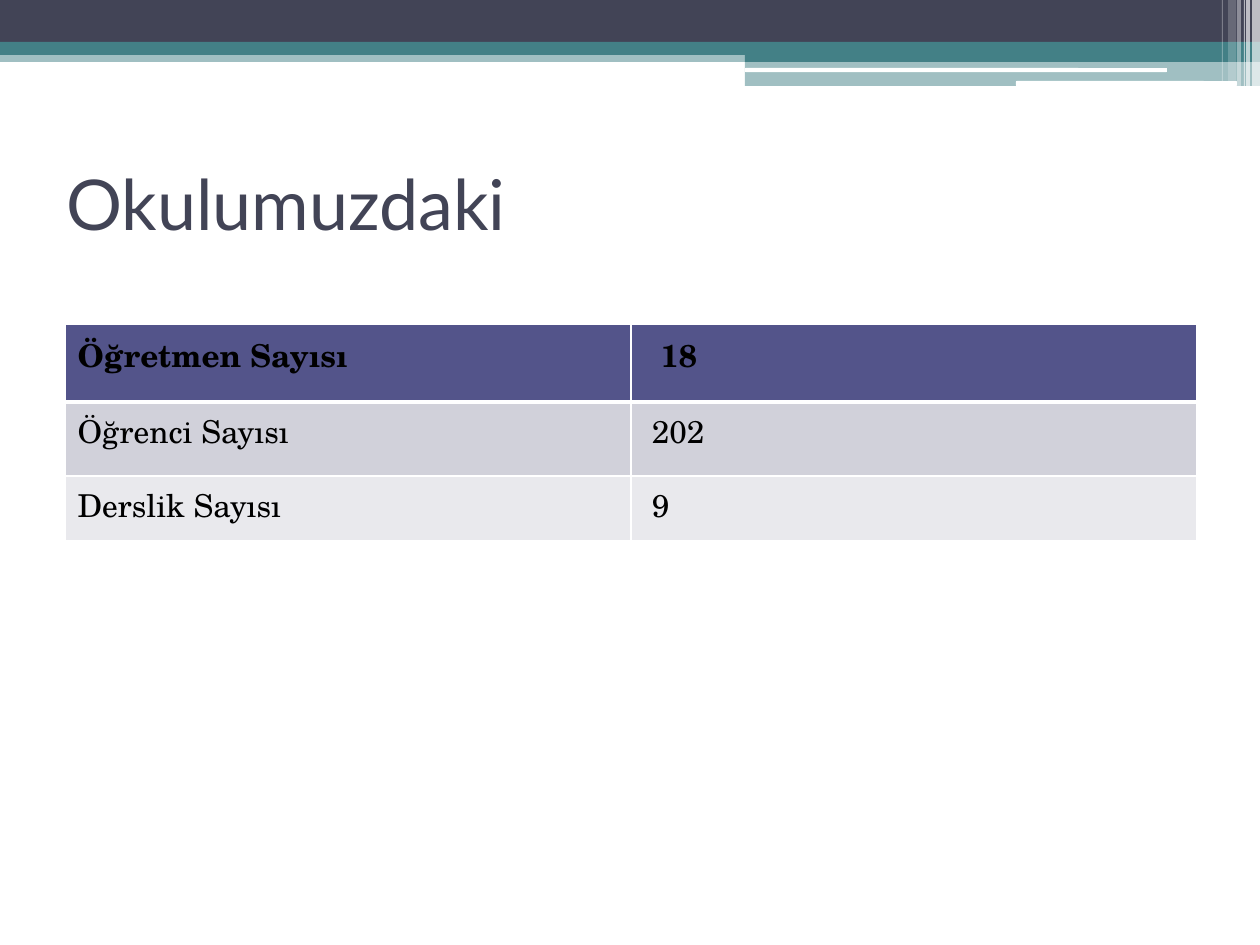
import pptx
import pptx.util
import pptx.dml.color
import pptx.enum.shapes
import pptx.enum.text
import pptx.oxml
import pptx.oxml.ns
import lxml.etree

DARK, TEAL, WHITE, BLACK = "424456", "438086", "FFFFFF", "000000"
SHAPES = pptx.enum.shapes.MSO_SHAPE


def px(count):
    return pptx.util.Inches(count / 126)


def tint(code):
    return pptx.dml.color.RGBColor.from_string(code)


class Deck:
    """Hold the style and the current slide, and draw each kind of element."""

    head_font, body_font = "Lato", "TeX Gyre Schola"
    head_size, body_size = 40, 18

    def __init__(self):
        self.show = pptx.Presentation()
        self.show.slide_width, self.show.slide_height = px(1260), px(945)
        self.slide = self.show.slides.add_slide(self.show.slide_layouts[6])

    def bar(self, left, top, width, height, color, alpha=100, kind=SHAPES.RECTANGLE):
        shape = self.slide.shapes.add_shape(kind, px(left), px(top), px(width), px(height))
        shape.shadow.inherit = False
        shape.line.fill.background()
        shape.fill.solid()
        shape.fill.fore_color.rgb = tint(color)
        if alpha < 100:
            node = shape.element.spPr.find(".//" + pptx.oxml.ns.qn("a:srgbClr"))
            lxml.etree.SubElement(node, pptx.oxml.ns.qn("a:alpha"), val=str(alpha * 1000))

    def label(self, frame, text, font, size, color, bold=False):
        line = frame.paragraphs[0]
        line.text = text
        line.font.name, line.font.size = font, pptx.util.Pt(size)
        line.font.color.rgb, line.font.bold = tint(color), bold

    def title(self, text, left, top, width, height):
        frame = self.slide.shapes.add_textbox(px(left), px(top), px(width), px(height)).text_frame
        frame.word_wrap = True
        frame.vertical_anchor = pptx.enum.text.MSO_ANCHOR.MIDDLE
        self.label(frame, text, self.head_font, self.head_size, DARK)

    def edge(self, cell, side, points):
        cell._tc.get_or_add_tcPr().append(pptx.oxml.parse_xml(
            f'<a:ln{side} {pptx.oxml.ns.nsdecls("a")} w="{points * 12700}">'
            f'<a:solidFill><a:srgbClr val="{WHITE}"/></a:solidFill></a:ln{side}>'))

    def table(self, rows, left, top, width, heights, fills, insets):
        cols = len(rows[0])
        grid = self.slide.shapes.add_table(
            len(rows), cols, px(left), px(top), px(width), px(sum(heights))).table
        for r, row in enumerate(rows):
            grid.rows[r].height = px(heights[r])
            for c, text in enumerate(row):
                cell = grid.cell(r, c)
                for side in "LRTB":
                    thick = (r, side) in ((0, "B"), (1, "T"))
                    self.edge(cell, side, 3 if thick else 1)
                cell.fill.solid()
                cell.fill.fore_color.rgb = tint(fills[r])
                if c:
                    cell.margin_left = px(insets[r])
                self.label(cell.text_frame, text, self.body_font, self.body_size, BLACK, r == 0)

    def save(self):
        self.show.save("out.pptx")


def main():
    deck = Deck()
    deck.bar(0, 50, 1260, 12, TEAL, 50)
    deck.bar(0, 0, 1260, 42, DARK)
    deck.bar(0, 42, 1260, 13, TEAL)
    deck.bar(745, 49, 515, 13, TEAL)
    deck.bar(745, 62, 515, 24, TEAL, 50)
    for left, top, width, height in ((745, 68, 422, 4), (1016, 81, 221, 5)):
        deck.bar(left, top, width, height, WHITE, kind=SHAPES.ROUNDED_RECTANGLE)
    stripes = ((1252, 8, 86, 65), (1246, 4, 86, 65), (1244, 1, 86, 60),
               (1237, 4, 86, 40), (1228, 8, 81, 20), (1222, 1, 81, 30))
    for left, width, height, alpha in stripes:
        deck.bar(left, 0, width, height, WHITE, alpha)
    deck.title("Okulumuzdaki", 54, 106, 1134, 193)
    rows = (("Öğretmen Sayısı", "18"), ("Öğrenci Sayısı", "202"), ("Derslik Sayısı", "9"))
    deck.table(rows, 65, 324, 1132, (78, 74, 65), ("53548A", "D1D1DA", "E9E9ED"), (30, 21, 21))
    deck.save()


if __name__ == "__main__":
    main()
